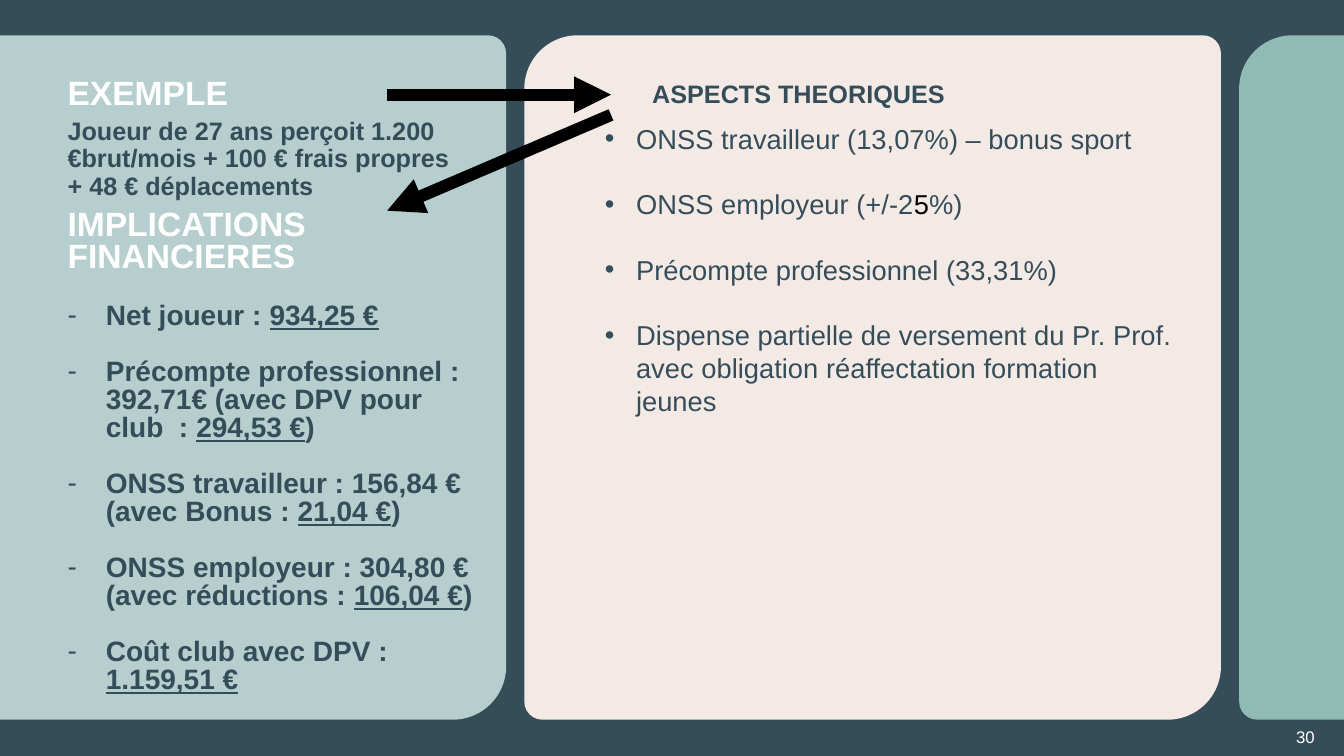
from lxml.etree import SubElement
from pptx import Presentation
from pptx.dml.color import RGBColor
from pptx.enum.shapes import MSO_CONNECTOR as Connector, MSO_SHAPE as Preset
from pptx.enum.text import MSO_ANCHOR as Anchor, PP_ALIGN as Align
from pptx.oxml.ns import qn
from pptx.util import Inches, Pt

COLORS = {"slate": "354C59", "mist": "B7CECF", "sand": "F3EAE6",
          "sage": "90BBB5", "white": "FFFFFF", "black": "000000"}
FONT = "Arial"
PANEL_TOP, PANEL_HEIGHT = 0.35, 6.79
LARGE_RADIUS, SMALL_RADIUS = 0.53, 0.18

EXAMPLE = ("Joueur de 27 ans perçoit 1.200 €brut/mois + 100 € frais propres "
           "+ 48 € déplacements")
RESULTS = [
    ("Net joueur : ", "934,25 €", ""),
    ("Précompte professionnel : 392,71€ (avec DPV pour club  : ", "294,53 €", ")"),
    ("ONSS travailleur : 156,84 € (avec Bonus : ", "21,04 €", ")"),
    ("ONSS employeur : 304,80 € (avec réductions : ", "106,04 €", ")"),
    ("Coût club avec DPV : ", "1.159,51 €", ""),
]
THEORY = [
    [("ONSS travailleur (13,07%) – bonus sport", "slate")],
    [("ONSS employeur (+/-2", "slate"), ("5", "black"), ("%)", "slate")],
    [("Précompte professionnel (33,31%)", "slate")],
    [("Dispense partielle de versement du Pr. Prof. avec obligation "
      "réaffectation formation jeunes", "slate")],
]


def color(name):
    """Return the named palette colour."""
    return RGBColor.from_string(COLORS[name])


def add_panel(page, left, width, fill):
    """Draw a full-height panel with unequal diagonal corners."""
    panel = page.shapes.add_shape(Preset.ROUND_2_DIAG_RECTANGLE, Inches(left),
                                  Inches(PANEL_TOP), Inches(width), Inches(PANEL_HEIGHT))
    shorter = min(width, PANEL_HEIGHT)
    panel.adjustments[0] = LARGE_RADIUS / shorter
    panel.adjustments[1] = SMALL_RADIUS / shorter
    panel.shadow.inherit = False
    panel.fill.solid()
    panel.fill.fore_color.rgb = color(fill)
    panel.line.fill.background()


def add_box(page, left, top, width, height, margins=(0, 0)):
    """Add a wrapping text box and return its frame."""
    box = page.shapes.add_textbox(Inches(left), Inches(top), Inches(width), Inches(height))
    frame = box.text_frame
    frame.word_wrap = True
    frame.margin_left = frame.margin_right = Inches(margins[0])
    frame.margin_top = frame.margin_bottom = Inches(margins[1])
    return frame


def add_span(para, text, size, tint, bold=False, underline=False):
    """Append one formatted run."""
    span = para.add_run()
    span.text = text
    span.font.name = FONT
    span.font.size = Pt(size)
    span.font.bold = bold
    span.font.underline = underline
    span.font.color.rgb = color(tint)


def add_bullet(para, mark, indent):
    """Give a paragraph a hanging bullet."""
    properties = para._p.get_or_add_pPr()
    properties.set("marL", str(Inches(indent)))
    properties.set("indent", str(-Inches(indent)))
    tint = SubElement(properties, qn("a:buClr"))
    SubElement(tint, qn("a:srgbClr"), val=COLORS["slate"])
    SubElement(properties, qn("a:buFont"), typeface=FONT)
    SubElement(properties, qn("a:buChar"), char=mark)


def add_example(page, left, top, width):
    """Place the example heading and its description."""
    heading = add_box(page, left, top, width, 0.4).paragraphs[0]
    heading.line_spacing = 0.9
    add_span(heading, "EXEMPLE", 24, "white", bold=True)
    description = add_box(page, left, top + 0.42, width, 1.1).paragraphs[0]
    description.line_spacing = 0.9
    add_span(description, EXAMPLE, 18, "slate", bold=True)


def add_implications(page, left, top, width, height):
    """Place the financial implications and their amounts."""
    frame = add_box(page, left, top, width, height)
    heading = frame.paragraphs[0]
    heading.line_spacing = 0.8
    add_span(heading, "IMPLICATIONS FINANCIERES", 24, "white", bold=True)
    for label, amount, ending in RESULTS:
        para = frame.add_paragraph()
        add_bullet(para, "-", 0.38)
        para.line_spacing = Pt(20)
        para.space_before = Pt(20)
        add_span(para, label, 20, "slate", bold=True)
        add_span(para, amount, 20, "slate", bold=True, underline=True)
        if ending:
            add_span(para, ending, 20, "slate", bold=True)


def add_theory(page, left, top, width, height):
    """Place the theory heading and its bullet list."""
    heading = add_box(page, left + 0.47, top, 5.58, 0.4, (0.1, 0.05)).paragraphs[0]
    add_span(heading, "ASPECTS THEORIQUES", 18, "slate", bold=True)
    frame = add_box(page, left, top + 0.43, width, height, (0.1, 0.05))
    for index, spans in enumerate(THEORY):
        para = frame.add_paragraph() if index else frame.paragraphs[0]
        add_bullet(para, "•", 0.31)
        if index:
            para.space_before = Pt(23.4)
        for text, tint in spans:
            add_span(para, text, 19.5, tint)


def add_arrow(page, start, end):
    """Draw a thick black arrow between two points."""
    arrow = page.shapes.add_connector(Connector.STRAIGHT, *map(Inches, start + end))
    arrow.line.width = Pt(8.75)
    arrow.line.color.rgb = color("black")
    SubElement(arrow.line._get_or_add_ln(), qn("a:tailEnd"), type="triangle")
    SubElement(arrow._element.spPr, qn("a:effectLst"))


def add_page_number(page, left, top, width, height):
    """Place the page number in the footer."""
    frame = add_box(page, left, top, width, height)
    frame.vertical_anchor = Anchor.MIDDLE
    para = frame.paragraphs[0]
    para.alignment = Align.RIGHT
    add_span(para, "30", 12, "white")


def main():
    """Build and save the deck."""
    deck = Presentation()
    deck.slide_width, deck.slide_height = Inches(13.33), Inches(7.5)
    page = deck.slides.add_slide(deck.slide_layouts[6])
    page.background.fill.solid()
    page.background.fill.fore_color.rgb = color("slate")
    add_panel(page, -2.77, 7.79, "mist")
    add_panel(page, 12.29, 8.2, "sage")
    add_panel(page, 5.2, 6.91, "sand")
    add_page_number(page, 12.22, 7.21, 0.82, 0.2)
    add_example(page, 0.67, 0.76, 3.81)
    add_implications(page, 0.67, 2.09, 4.33, 4.81)
    add_theory(page, 5.9, 0.73, 5.92, 3.71)
    add_arrow(page, (6.06, 1.14), (3.84, 2.09))
    add_arrow(page, (3.84, 0.94), (6.06, 0.94))
    deck.save("out.pptx")


if __name__ == "__main__":
    main()
